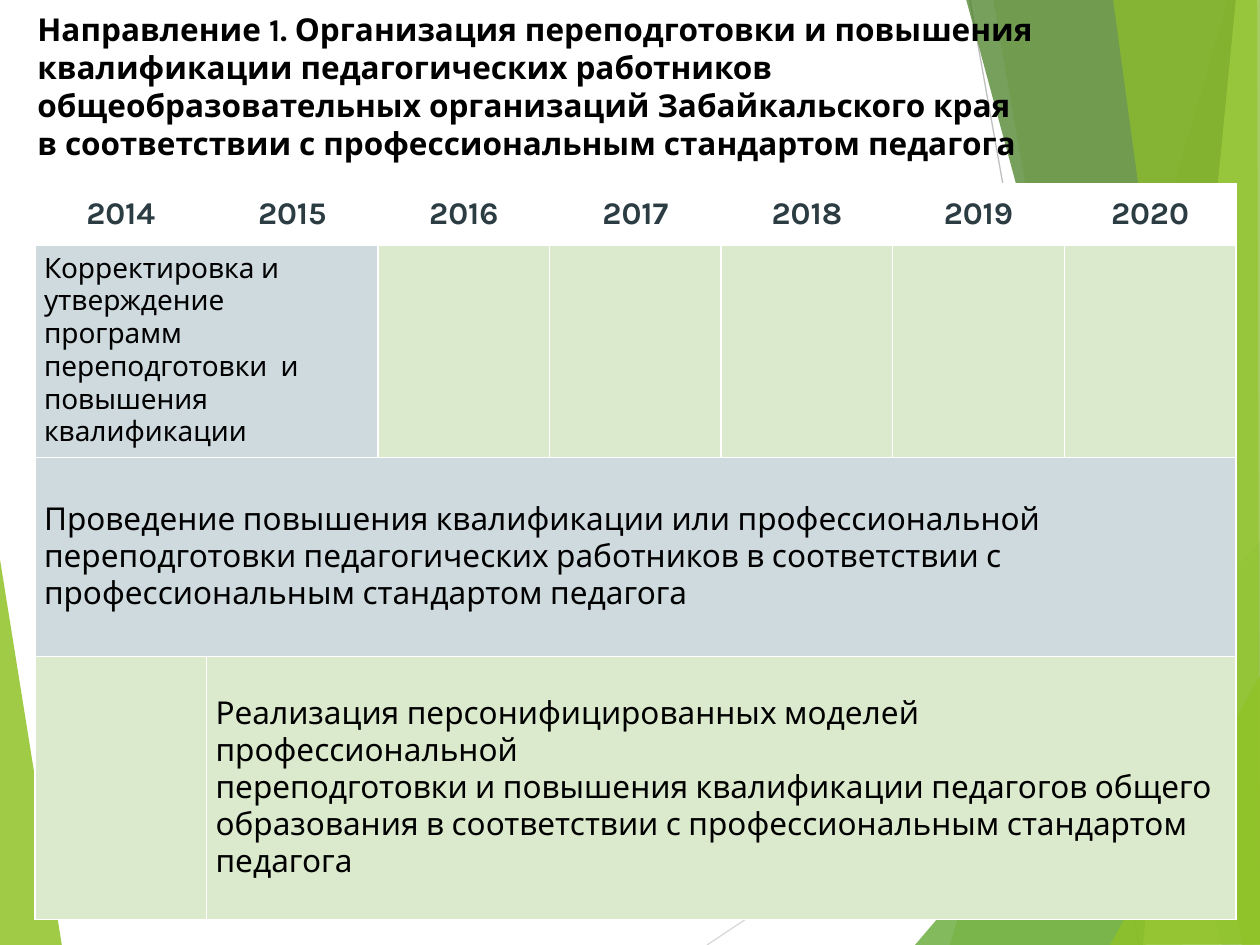
"""Build the slide on direction 1: teacher retraining by year, 2014 to 2020."""
from dataclasses import dataclass

from lxml.etree import SubElement
from pptx import Presentation
from pptx.dml.color import RGBColor
from pptx.enum.shapes import MSO_CONNECTOR
from pptx.enum.text import MSO_ANCHOR, PP_ALIGN
from pptx.oxml.ns import qn
from pptx.util import Pt

SCALE = 914400 / 126


@dataclass(frozen=True)
class Theme:
    font: str = "Karla"
    black: str = "000000"
    white: str = "FFFFFF"
    heading: str = "2C3C43"
    blue: str = "CFDADF"
    green: str = "DBE9CD"
    large: int = 18
    small: int = 16
    title_leading: float = 21.7


THEME = Theme()

SLIDE_SIZE = (1260, 945)
LEFT_FACET = ([(-1, 553), (62, 946), (-1, 945)], "90C226", 85)
RAYS = [((707, 945), (1261, 576), "D9D9D9"), ((970, 0), (1139, 945), "BFBFBF")]
RIGHT_FACETS = [
    ([(1228, 0), (950, 945), (1262, 946), (1261, 1)], "90C226", 30),
    ([(993, -1), (1158, 945), (1261, 945), (1261, -1)], "90C226", 20),
    ([(915, 945), (1260, 541), (1261, 945)], "54A021", 72),
    ([(966, -1), (1222, 945), (1261, 944), (1261, -1)], "3F7819", 70),
    ([(1236, -1), (1143, 945), (1261, 945), (1260, -1)], "C0E474", 70),
    ([(1113, -1), (1242, 945), (1260, 945), (1257, -1)], "90C226", 65),
    ([(1110, 945), (1261, 674), (1261, 944)], "90C226", 80),
]

TITLE = (
    "Направление 1. Организация переподготовки и повышения квалификации "
    "педагогических работников общеобразовательных организаций "
    "Забайкальского края в соответствии с профессиональным стандартом педагога"
)
TITLE_BOX = (25, 4, 1022, 180)

YEARS = [str(year) for year in range(2014, 2021)]
TABLE_BOX = (35, 184, 1201, 714)
ROW_HEIGHTS = [60, 192, 199, 263]
STAGES = [
    (1, 0, 2, THEME.blue, THEME.small,
     ["Корректировка и утверждение программ  переподготовки  и  повышения квалификации"]),
    (2, 0, 7, THEME.blue, THEME.large,
     ["Проведение повышения квалификации или профессиональной переподготовки "
      "педагогических работников в соответствии с профессиональным стандартом педагога"]),
    (3, 1, 6, THEME.green, THEME.large,
     ["Реализация персонифицированных моделей профессиональной",
      "переподготовки и повышения квалификации педагогов общего образования "
      "в соответствии с профессиональным стандартом педагога"]),
]


def px(value):
    return round(value * SCALE)


def px_all(values):
    return [px(value) for value in values]


def rgb(color):
    return RGBColor.from_string(color)


def write(frame, paragraphs, *, size, color=THEME.black, bold=False,
          align=PP_ALIGN.LEFT, leading=None):
    for index, text in enumerate(paragraphs):
        paragraph = frame.add_paragraph() if index else frame.paragraphs[0]
        paragraph.alignment = align
        if leading:
            paragraph.line_spacing = Pt(leading)
        run = paragraph.add_run()
        run.text = text
        run.font.name = THEME.font
        run.font.size = Pt(size)
        run.font.bold = bold
        run.font.color.rgb = rgb(color)


def add_facet(slide, points, color, opacity):
    builder = slide.shapes.build_freeform(*points[0], scale=SCALE)
    builder.add_line_segments(points[1:], close=True)
    shape = builder.convert_to_shape()
    shape.shadow.inherit = False
    shape.line.fill.background()
    shape.fill.solid()
    shape.fill.fore_color.rgb = rgb(color)
    fill_color = shape.fill._xPr.find(qn("a:solidFill"))[0]
    SubElement(fill_color, qn("a:alpha"), val=str(opacity * 1000))


def add_ray(slide, start, end, color):
    ray = slide.shapes.add_connector(
        MSO_CONNECTOR.STRAIGHT, *px_all(start), *px_all(end))
    ray.line.color.rgb = rgb(color)
    ray.line.width = Pt(0.75)
    SubElement(ray._element.spPr, qn("a:effectLst"))


def style_cell(cell, color, bottom=1, top=1):
    cell.vertical_anchor = MSO_ANCHOR.MIDDLE
    cell.margin_left = cell.margin_right = px(9)
    cell.margin_top = cell.margin_bottom = px(6)
    properties = cell._tc.get_or_add_tcPr()
    for side, width in (("L", 1), ("R", 1), ("T", top), ("B", bottom)):
        border = SubElement(properties, qn(f"a:ln{side}"), w=str(Pt(width)))
        fill = SubElement(border, qn("a:solidFill"))
        SubElement(fill, qn("a:srgbClr"), val=THEME.white)
    cell.fill.solid()
    cell.fill.fore_color.rgb = rgb(color)


def add_title(slide):
    frame = slide.shapes.add_textbox(*px_all(TITLE_BOX)).text_frame
    frame.word_wrap = True
    write(frame, [TITLE], size=THEME.large, bold=True, leading=THEME.title_leading)


def add_schedule(slide):
    table = slide.shapes.add_table(
        len(ROW_HEIGHTS), len(YEARS), *px_all(TABLE_BOX)).table
    for column in table.columns:
        column.width = px(TABLE_BOX[2] / len(YEARS))
    for row, height in zip(table.rows, ROW_HEIGHTS):
        row.height = px(height)

    fills = {(row, column + offset): color
             for row, column, span, color, _, _ in STAGES for offset in range(span)}
    for row in range(len(ROW_HEIGHTS)):
        for column, year in enumerate(YEARS):
            cell = table.cell(row, column)
            if row == 0:
                style_cell(cell, THEME.white, bottom=3)
                write(cell.text_frame, [year], size=THEME.large, bold=True,
                      color=THEME.heading, align=PP_ALIGN.CENTER)
            else:
                style_cell(cell, fills.get((row, column), THEME.green),
                           top=3 if row == 1 else 1)

    for row, column, span, _, size, paragraphs in STAGES:
        cell = table.cell(row, column)
        cell.merge(table.cell(row, column + span - 1))
        write(cell.text_frame, paragraphs, size=size)


def main():
    presentation = Presentation()
    presentation.slide_width, presentation.slide_height = px_all(SLIDE_SIZE)
    slide = presentation.slides.add_slide(presentation.slide_layouts[6])
    add_facet(slide, *LEFT_FACET)
    for ray in RAYS:
        add_ray(slide, *ray)
    for facet in RIGHT_FACETS:
        add_facet(slide, *facet)
    add_title(slide)
    add_schedule(slide)
    presentation.save("out.pptx")


if __name__ == "__main__":
    main()
